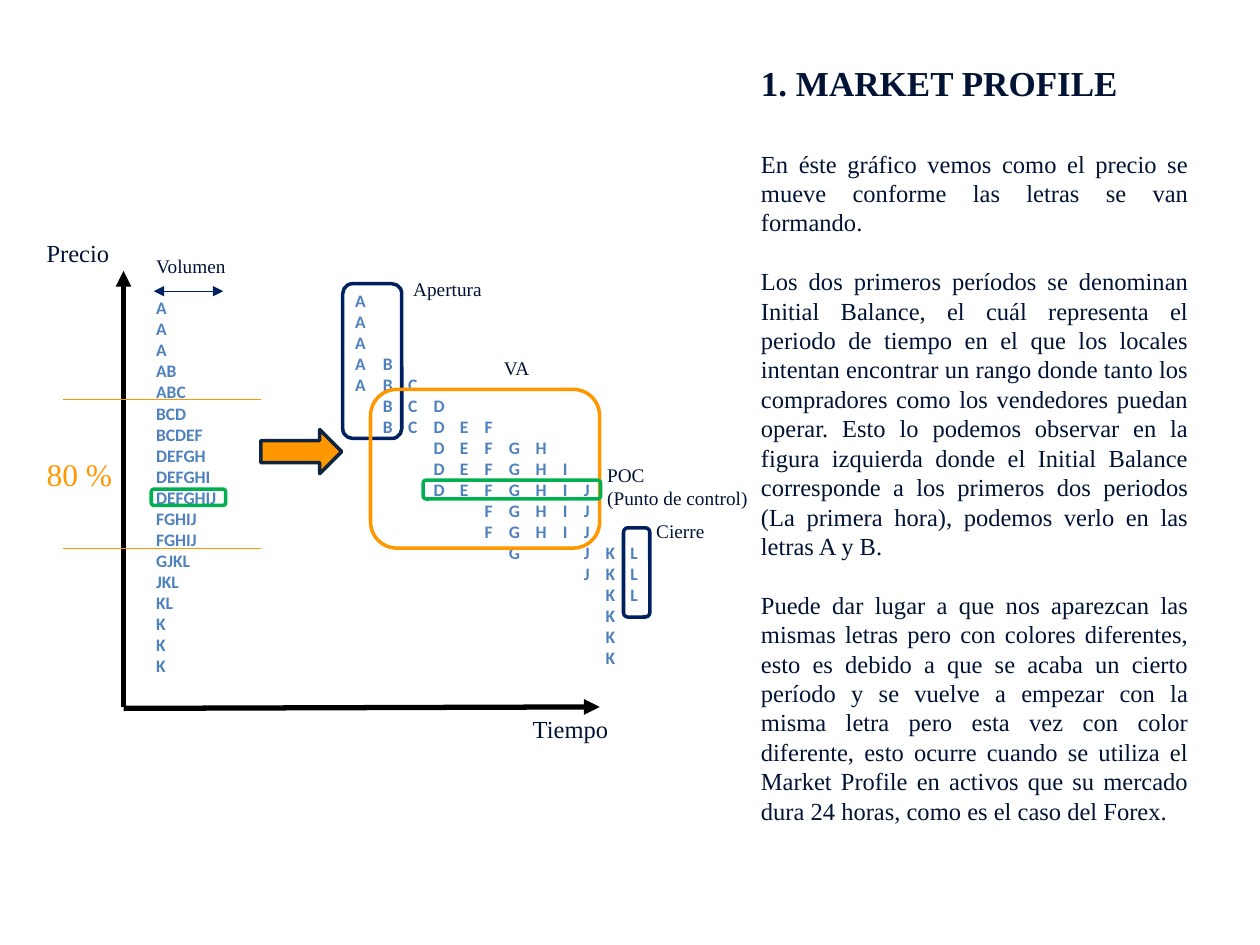
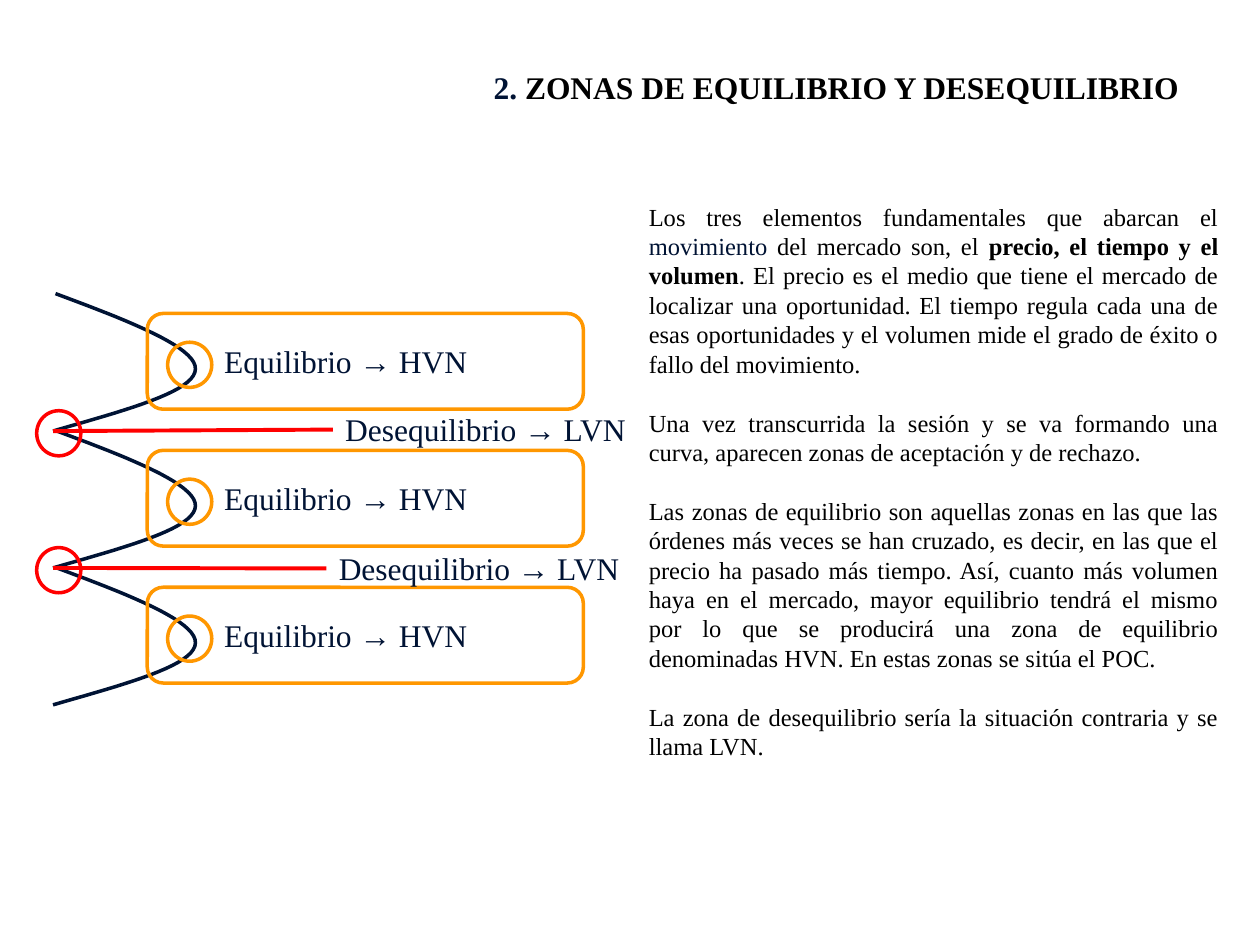
from lxml import etree
from pptx import Presentation
from pptx.enum import shapes, text
from pptx.dml.color import RGBColor
from pptx.oxml import ns
from pptx.util import Cm, Pt

HUES = {"ink": "001334", "black": "000000", "navy": "002060", "edge": "0F243E",
        "gold": "FF9700", "blue": "4F81BD", "green": "00B050", "red": "FF0000"}
SERIF, SANS = "Times New Roman", "Calibri"
GAP = 16.8  # points between body paragraphs

# Slide 1: letters traded at each price, top to bottom
ROWS = ["A", "A", "A", "AB", "ABC", "BCD", "BCDEF", "DEFGH", "DEFGHI", "DEFGHIJ",
        "FGHIJ", "FGHIJ", "GJKL", "JKL", "KL", "K", "K", "K"]
STOPS = [0.56, 1.07, 1.58, 2.11, 2.61, 3.1, 3.64, 4.19, 4.61, 5.05, 5.55]
VOLUME, PROFILE = (2.9, 5.87, 1.8, 7.95), (6.91, 5.72, 7.01, 7.95)
LABELS = [  # lines, box, size, colour
    (["Precio"], (0.69, 4.67, 2.21, 0.86), 14, "ink"),
    (["Tiempo"], (10.49, 14.27, 2.21, 0.86), 14, "ink"),
    (["80 %"], (0.69, 9.04, 2.01, 1.02), 18, "gold"),
    (["Volumen"], (2.9, 5, 4.11, 0.74), 11, "ink"),
    (["Apertura"], (8.08, 5.46, 3, 0.74), 11, "ink"),
    (["Cierre"], (12.98, 10.34, 3, 0.74), 11, "ink"),
    (["POC", "(Punto de control)"], (11.99, 9.22, 4.7, 1.19), 11, "ink"),
    (["VA"], (9.91, 7.06, 3, 0.74), 11, "ink"),
]
LINES = [  # ends, colour, width, arrowheads
    ((2.49, 14.26, 2.49, 5.46), "black", 3, ["tailEnd"]),
    ((2.49, 14.28, 12.09, 14.25), "black", 3, ["tailEnd"]),
    ((1.27, 8.05, 5.26, 8.05), "gold", 0.75, []),
    ((1.27, 11.05, 5.26, 11.05), "gold", 0.75, []),
    ((3.1, 5.87, 4.5, 5.87), "navy", 0.75, ["headEnd", "tailEnd"]),
]
FRAMES = [
    ((6.91, 5.72, 1.19, 3.12), "navy"),
    ((7.47, 7.85, 4.62, 3.2), "gold"),
    ((3.05, 9.86, 1.5, 0.33), "green"),
    ((8.53, 9.68, 3.58, 0.38), "green"),
    ((12.57, 10.64, 0.53, 1.8), "navy"),
]
ARROW = (5.26, 8.66, 1.63, 0.89)
MARKET = [
    "En éste gráfico vemos como el precio se mueve conforme las letras se van formando.",
    "Los dos primeros períodos se denominan Initial Balance, el cuál representa el periodo "
    "de tiempo en el que los locales intentan encontrar un rango donde tanto los compradores "
    "como los vendedores puedan operar. Esto lo podemos observar en la figura izquierda donde "
    "el Initial Balance corresponde a los primeros dos periodos (La primera hora), podemos "
    "verlo en las letras A y B.",
    "Puede dar lugar a que nos aparezcan las mismas letras pero con colores diferentes, esto "
    "es debido a que se acaba un cierto período y se vuelve a empezar con la misma letra pero "
    "esta vez con color diferente, esto ocurre cuando se utiliza el Market Profile en activos "
    "que su mercado dura 24 horas, como es el caso del Forex.",
]

# Slide 2: one wave of the curve, repeated downwards
STEP, WAVES = 2.76, 3
CURVE = [[(1.12, 5.92), (2.54, 6.45), (3.96, 6.99), (3.94, 7.44)],
         [(3.94, 7.44), (3.94, 7.9), (2.49, 8.28), (1.07, 8.69)]]
ZONE, PEAK = (2.97, 6.32, 8.79, 1.93), (3.38, 6.9, 0.89, 0.91)
HVN, VALLEY = (4.27, 6.78, 7.04, 1.02), (0.74, 8.28, 0.89, 0.91)
LVN = [(6.71, 8.15, 6.2, 1.02), (6.58, 10.95, 6.2, 1.02)]
ZONES = [
    [("Los tres elementos fundamentales que abarcan el ",), ("movimiento", "ink"),
     (" del mercado son, el ",), ("precio, el tiempo y el volumen", "black", True),
     (". El precio es el medio que tiene el mercado de localizar una oportunidad. El tiempo "
      "regula cada una de esas oportunidades y el volumen mide el grado de éxito o fallo del "
      "movimiento.",)],
    "Una vez transcurrida la sesión y se va formando una curva, aparecen zonas de aceptación "
    "y de rechazo.",
    "Las zonas de equilibrio son aquellas zonas en las que las órdenes más veces se han "
    "cruzado, es decir, en las que el precio ha pasado más tiempo. Así, cuanto más volumen "
    "haya en el mercado, mayor equilibrio tendrá el mismo por lo que se producirá una zona de "
    "equilibrio denominadas HVN. En estas zonas se sitúa el POC.",
    "La zona de desequilibrio sería la situación contraria y se llama LVN.",
]


def rgb(hue):
    return RGBColor.from_string(HUES[hue])


def write(slide, box, paras, size, hue="ink", font=SERIF, bold=False, gap=0, stops=()):
    """Add a text box; a paragraph is a string or a list of (words, colour, bold)."""
    shape = slide.shapes.add_textbox(*map(Cm, box))
    frame = shape.text_frame
    frame.word_wrap = True
    frame.auto_size = text.MSO_AUTO_SIZE.SHAPE_TO_FIT_TEXT
    for i, runs in enumerate(paras):
        para = frame.paragraphs[0] if i == 0 else frame.add_paragraph()
        if gap:
            para.alignment = text.PP_ALIGN.JUSTIFY
            para.space_before = Pt(gap if i else 0)
        if stops:
            tabs = etree.SubElement(para._p.get_or_add_pPr(), ns.qn("a:tabLst"))
            for stop in stops:
                etree.SubElement(tabs, ns.qn("a:tab"), pos=str(Cm(stop)), algn="l")
        for words, *look in [(runs,)] if isinstance(runs, str) else runs:
            run = para.add_run()
            run.text = words
            run.font.name, run.font.size = font, Pt(size)
            run.font.color.rgb = rgb(look[0] if look else hue)
            run.font.bold = look[1] if len(look) > 1 else bold
    return shape


def style(shape, hue, fill=None):
    shape.shadow.inherit = False
    shape.line.color.rgb, shape.line.width = rgb(hue), Pt(2)
    if fill:
        shape.fill.solid()
        shape.fill.fore_color.rgb = rgb(fill)
    else:
        shape.fill.background()


def draw(slide, kind, box, hue, fill=None):
    style(slide.shapes.add_shape(kind, *map(Cm, box)), hue, fill)


def link(slide, ends, hue, width, heads=()):
    line = slide.shapes.add_connector(shapes.MSO_CONNECTOR.STRAIGHT, *map(Cm, ends))
    line.line.color.rgb, line.line.width = rgb(hue), Pt(width)
    for head in heads:
        etree.SubElement(line.line._get_or_add_ln(), ns.qn("a:" + head), type="triangle")
    etree.SubElement(line._element.spPr, ns.qn("a:effectLst"))
    return line


def bend(parts, steps=20):
    """Points along a chain of cubic curves."""
    for a, b, c, d in parts:
        for i in range(steps + 1):
            t = i / steps
            s = 1 - t
            yield tuple(Cm(s**3 * p + 3 * s * s * t * q + 3 * s * t * t * r + t**3 * e)
                        for p, q, r, e in zip(a, b, c, d))


def shift(box, drop):
    return (box[0], box[1] + drop, *box[2:])


def spread(row):
    """Put each letter of a row in its own column."""
    out, col = "", 0
    for letter in row:
        out += "\t" * (ord(letter) - ord("A") - col) + letter
        col = ord(letter) - ord("A")
    return out


def market(slide):
    for line in LINES:
        link(slide, *line)
    write(slide, VOLUME, ROWS, 10, "blue", SANS, True)
    write(slide, PROFILE, map(spread, ROWS), 10, "blue", SANS, True, stops=STOPS)
    draw(slide, shapes.MSO_SHAPE.RIGHT_ARROW, ARROW, "edge", "gold")
    for box, hue in FRAMES:
        draw(slide, shapes.MSO_SHAPE.ROUNDED_RECTANGLE, box, hue)
    for words, box, size, hue in LABELS:
        write(slide, box, words, size, hue)
    write(slide, (15.09, 2.87, 9.12, 13.41), MARKET, 14, gap=GAP)
    write(slide, (15.09, 1.12, 9.8, 1.12), ["1. MARKET PROFILE"], 20, bold=True)


def zones(slide):
    drops = [STEP * i for i in range(WAVES)]
    for drop in drops:
        first, *rest = bend([[shift(p, drop) for p in part] for part in CURVE])
        pen = slide.shapes.build_freeform(*first)
        pen.add_line_segments(rest, close=False)
        style(pen.convert_to_shape(), "ink")
    for drop in drops:
        draw(slide, shapes.MSO_SHAPE.ROUNDED_RECTANGLE, shift(ZONE, drop), "gold")
        write(slide, shift(HVN, drop), ["Equilibrio → HVN"], 18)
        draw(slide, shapes.MSO_SHAPE.OVAL, shift(PEAK, drop), "gold")
    for drop, box in zip(drops, LVN):
        label = write(slide, box, ["Desequilibrio → LVN"], 18)
        x, y = shift(CURVE[-1][-1], drop)
        link(slide, (x, y, box[0], y), "red", 2.25).end_connect(label, 1)
        draw(slide, shapes.MSO_SHAPE.OVAL, shift(VALLEY, drop), "red")
    write(slide, (12.83, 3.94, 11.99, 11.63), ZONES, 14, "black", gap=GAP)
    title = [("2. ", "ink", True), ("ZONAS DE EQUILIBRIO Y DESEQUILIBRIO", "black", True)]
    write(slide, (9.7, 1.24, 15.24, 1.02), [title], 18)


def main():
    deck = Presentation()
    deck.slide_width, deck.slide_height = Cm(25.4), Cm(19.05)
    for build in (market, zones):
        build(deck.slides.add_slide(deck.slide_layouts[6]))
    deck.save("out.pptx")


if __name__ == "__main__":
    main()
